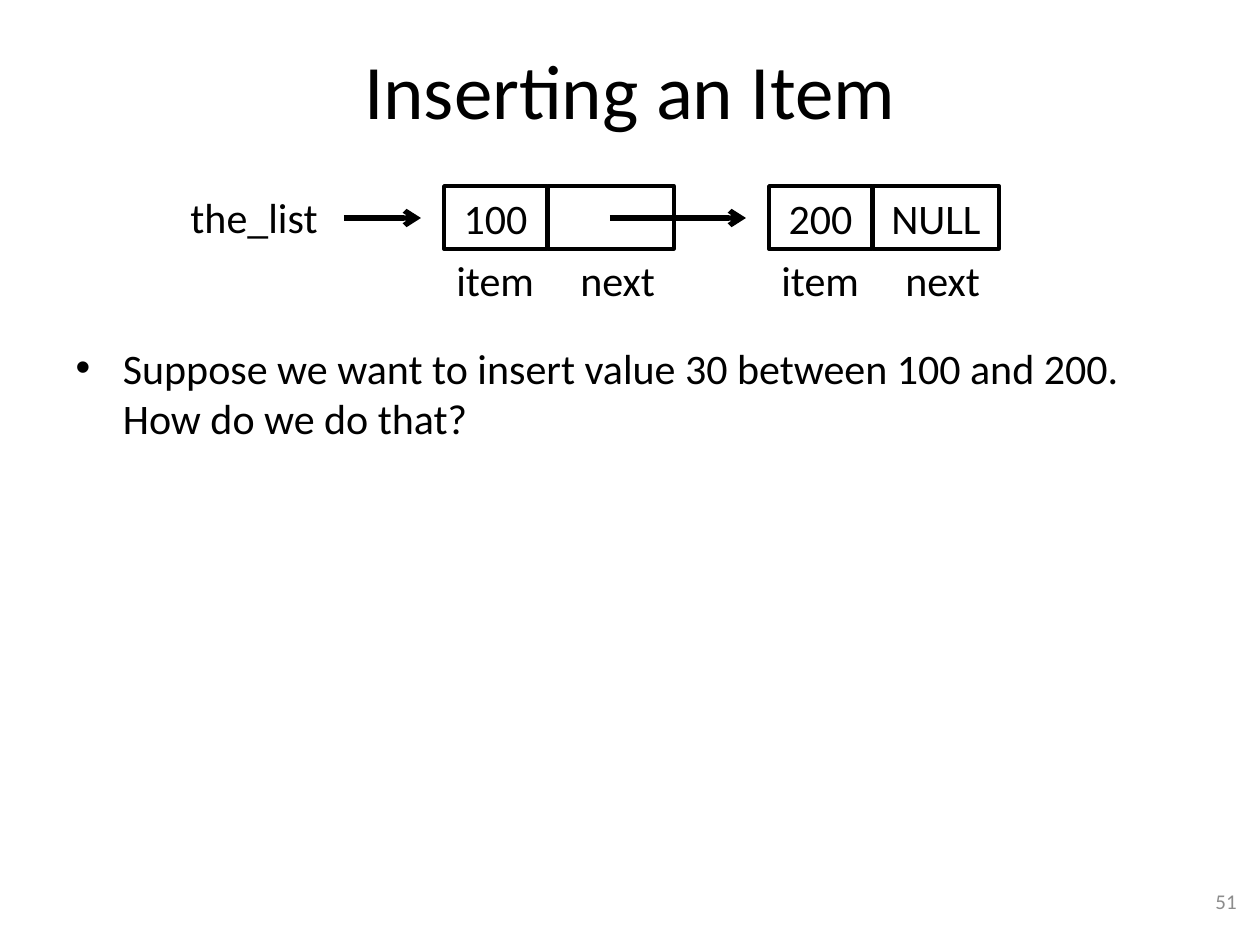
from lxml import etree
from pptx import Presentation
from pptx import util as u
from pptx.dml.color import RGBColor
from pptx.enum import shapes, text
from pptx.oxml.ns import qn

SCALE = u.Inches(1) / 126


def px(n):
    return u.Emu(round(n * SCALE))


def rgb(value):
    return RGBColor.from_string(value)


class Deck:
    """Holds the style and the slide being filled."""

    font, ink, grey, size = "Calibri", "000000", "8C8C8C", 24

    def __init__(self, prs):
        self.slide = prs.slides.add_slide(prs.slide_layouts[1])

    def set_text(self, sp, words, align, size=None, color=None):
        p = sp.text_frame.paragraphs[0]
        p.text, p.alignment = words, align
        p.font.name, p.font.size = self.font, u.Pt(size or self.size)
        p.font.color.rgb = rgb(color or self.ink)

    def placeholder(self, idx, box, words, align, size=None):
        sp = self.slide.placeholders[idx]
        sp.left, sp.top, sp.width, sp.height = map(px, box)
        self.set_text(sp, words, align, size)

    def label(self, box, words, align=text.PP_ALIGN.LEFT, wrap=False, size=None, color=None):
        sp = self.slide.shapes.add_textbox(*map(px, box))
        sp.text_frame.word_wrap = wrap
        self.set_text(sp, words, align, size, color)
        return sp

    def cell(self, box, words):
        sp = self.slide.shapes.add_shape(shapes.MSO_SHAPE.RECTANGLE, *map(px, box))
        sp.shadow.inherit = False
        sp.fill.background()
        sp.line.color.rgb, sp.line.width = rgb(self.ink), u.Pt(2)
        sp.text_frame.vertical_anchor = text.MSO_ANCHOR.TOP
        if words:
            self.set_text(sp, words, text.PP_ALIGN.CENTER)

    def arrow(self, x1, x2, y):
        sp = self.slide.shapes.add_connector(
            shapes.MSO_CONNECTOR.STRAIGHT, px(x1), px(y), px(x2), px(y))
        sp.line.color.rgb, sp.line.width = rgb(self.ink), u.Pt(3)
        props = sp._element.spPr
        etree.SubElement(props.find(qn("a:ln")), qn("a:tailEnd"), type="arrow")
        etree.SubElement(props, qn("a:effectLst"))

    def node(self, x, y, item, following):
        self.cell((x, y, 103, 63), item)
        self.cell((x + 104, y, 126, 63), following)
        self.label((x, y + 62, 103, 63), "item")
        self.label((x + 124, y + 62, 101, 63), "next")


def main():
    prs = Presentation()
    prs.slide_width, prs.slide_height = px(1260), px(945)
    deck = Deck(prs)
    align = text.PP_ALIGN

    deck.placeholder(0, (63, 10, 1134, 158), "Inserting an Item", align.CENTER, 44)
    deck.placeholder(1, (63, 336, 1134, 525),
                     "Suppose we want to insert value 30 between 100 and 200. How do we do that?",
                     align.LEFT)
    number = deck.label((955, 876, 294, 50), "51", align.RIGHT, True, 12, deck.grey)
    number.text_frame.vertical_anchor = text.MSO_ANCHOR.MIDDLE

    top, gap = 186, 23
    deck.label((125, top - 1, 205, 63), "the_list", align.RIGHT, True)
    for x, item, following, start in ((444, "100", "", 344), (769, "200", "NULL", 610)):
        deck.node(x, top, item, following)
        deck.arrow(start, x - gap, top + 32)

    prs.save("out.pptx")


if __name__ == "__main__":
    main()
